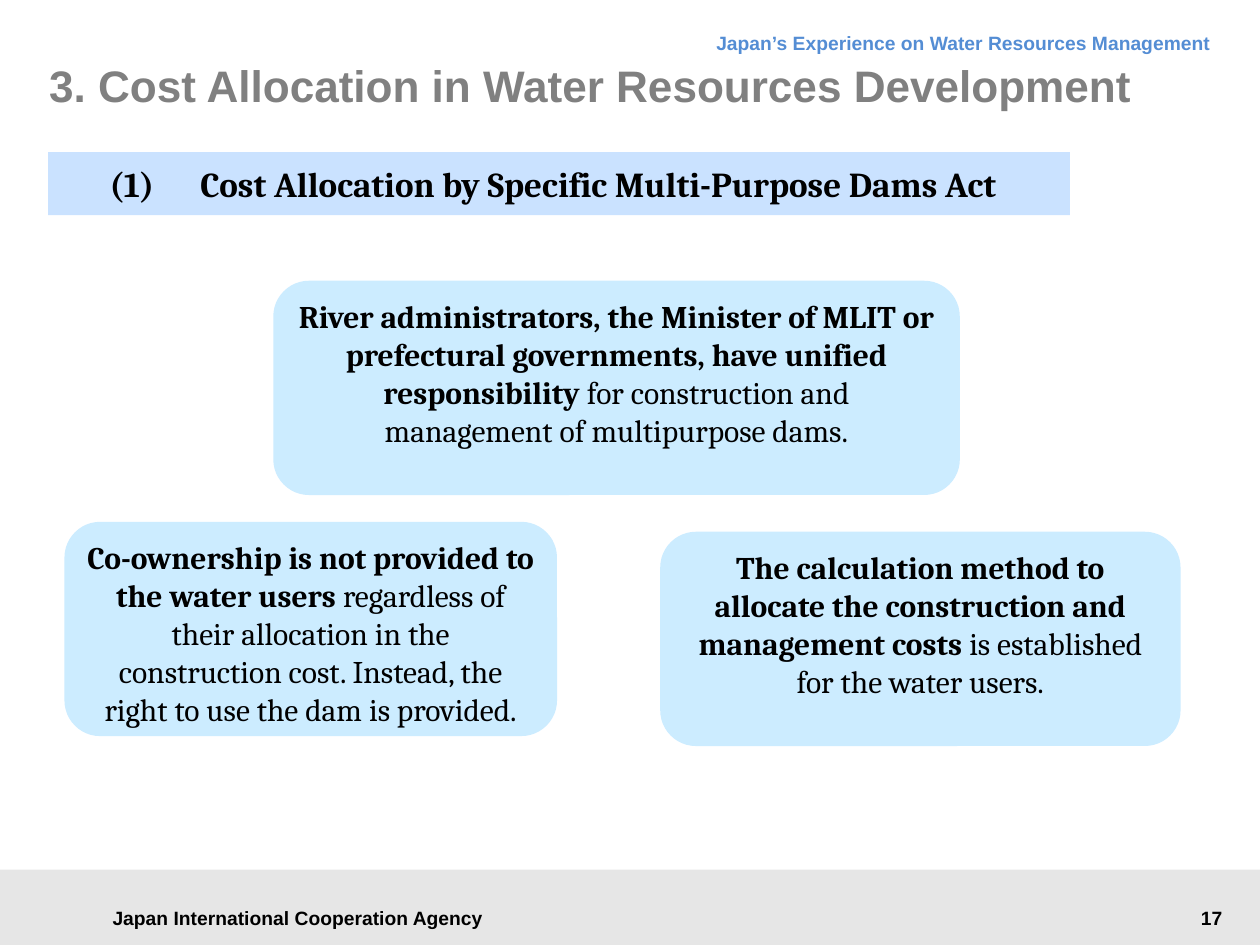
from dataclasses import dataclass

from pptx import Presentation
from pptx.dml.color import RGBColor
from pptx.enum.shapes import MSO_SHAPE as Preset
from pptx.enum.text import MSO_ANCHOR as Anchor, PP_ALIGN as Align
from pptx.util import Cm, Pt


@dataclass(frozen=True)
class Theme:
    black: str = "000000"
    title_gray: str = "808080"
    header_blue: str = "548DD4"
    footer_gray: str = "E6E6E6"
    heading_fill: str = "CAE2FF"
    card_fill: str = "CCECFF"
    sans: str = "Arial"
    serif: str = "Cambria"
    title_size: float = 25.2
    heading_size: float = 20
    body_size: float = 18
    small_size: float = 11


theme = Theme()
deck = Presentation()
deck.slide_width, deck.slide_height = Cm(25.4), Cm(19.05)
page = deck.slides.add_slide(deck.slide_layouts[6])


def add_panel(preset, place, fill):
    """Add a flat filled shape without outline; place is left, top, width, height in cm."""
    panel = page.shapes.add_shape(preset, *map(Cm, place))
    panel.shadow.inherit = False
    panel.fill.solid()
    panel.fill.fore_color.rgb = RGBColor.from_string(fill)
    panel.line.fill.background()
    return panel


def write(shape, parts, size, font, color, align=Align.LEFT, anchor=Anchor.MIDDLE):
    """Fill the shape with one paragraph of (text, bold) parts and return it."""
    frame = shape.text_frame
    frame.word_wrap = True
    frame.vertical_anchor = anchor
    para = frame.paragraphs[0]
    para.alignment = align
    for text, bold in parts:
        span = para.add_run()
        span.text = text
        span.font.name = font
        span.font.size = Pt(size)
        span.font.bold = bold
        span.font.color.rgb = RGBColor.from_string(color)
    return para


# Footer band, agency name, running header and page number
add_panel(Preset.RECTANGLE, (0, 17.53, 25.4, 1.52), theme.footer_gray)
small_texts = [
    ("Japan International Cooperation Agency", (1.8, 18.08, 8.41, 0.86),
     theme.black, Align.CENTER, Anchor.MIDDLE, None),
    ("Japan’s Experience on Water Resources Management", (6.91, 0.33, 17.75, 0.97),
     theme.header_blue, Align.RIGHT, Anchor.TOP, Pt(18)),
    ("17", (20.9, 18.14, 3.99, 0.74), theme.black, Align.RIGHT, Anchor.TOP, None),
]
for text, place, color, align, anchor, spacing in small_texts:
    box = page.shapes.add_textbox(*map(Cm, place))
    para = write(box, [(text, True)], theme.small_size, theme.sans, color, align, anchor)
    para.line_spacing = spacing

# Section heading with a hanging number
heading = add_panel(Preset.RECTANGLE, (0.97, 3.07, 20.6, 1.27), theme.heading_fill)
para = write(heading, [("(1)\tCost Allocation by Specific Multi-Purpose Dams Act", True)],
             theme.heading_size, theme.serif, theme.black)
frame = heading.text_frame
frame.margin_left, frame.margin_right = Cm(1.09), Cm(0.89)
frame.margin_top = frame.margin_bottom = Cm(0.2)
properties = para._p.get_or_add_pPr()
properties.set("marL", str(Cm(1.98)))
properties.set("indent", str(Cm(-1.83)))

# Cards: bold statement followed by plain detail
card_height = 4.32
cards = [
    (5.51, 5.66, 13.84,
     "River administrators, the Minister of MLIT or prefectural governments, "
     "have unified responsibility",
     " for construction and management of multipurpose dams."),
    (1.3, 10.52, 9.93,
     "Co-ownership is not provided to the water users ",
     "regardless of their allocation in the construction cost. "
     "Instead, the right to use the dam is provided."),
    (13.31, 10.72, 10.49,
     "The calculation method to allocate the construction and management costs ",
     "is established for the water users."),
]
for left, top, width, statement, detail in cards:
    card = add_panel(Preset.ROUNDED_RECTANGLE, (left, top, width, card_height), theme.card_fill)
    write(card, [(statement, True), (detail, False)], theme.body_size, theme.serif,
          theme.black, Align.CENTER, Anchor.TOP)

# Slide title
title = page.shapes.add_textbox(Cm(0.99), Cm(0.71), Cm(22.86), Cm(2.01))
write(title, [("3. Cost Allocation in Water Resources Development", True)],
      theme.title_size, theme.sans, theme.title_gray)
frame = title.text_frame
frame.margin_left = frame.margin_right = frame.margin_top = frame.margin_bottom = 0

deck.save("out.pptx")
